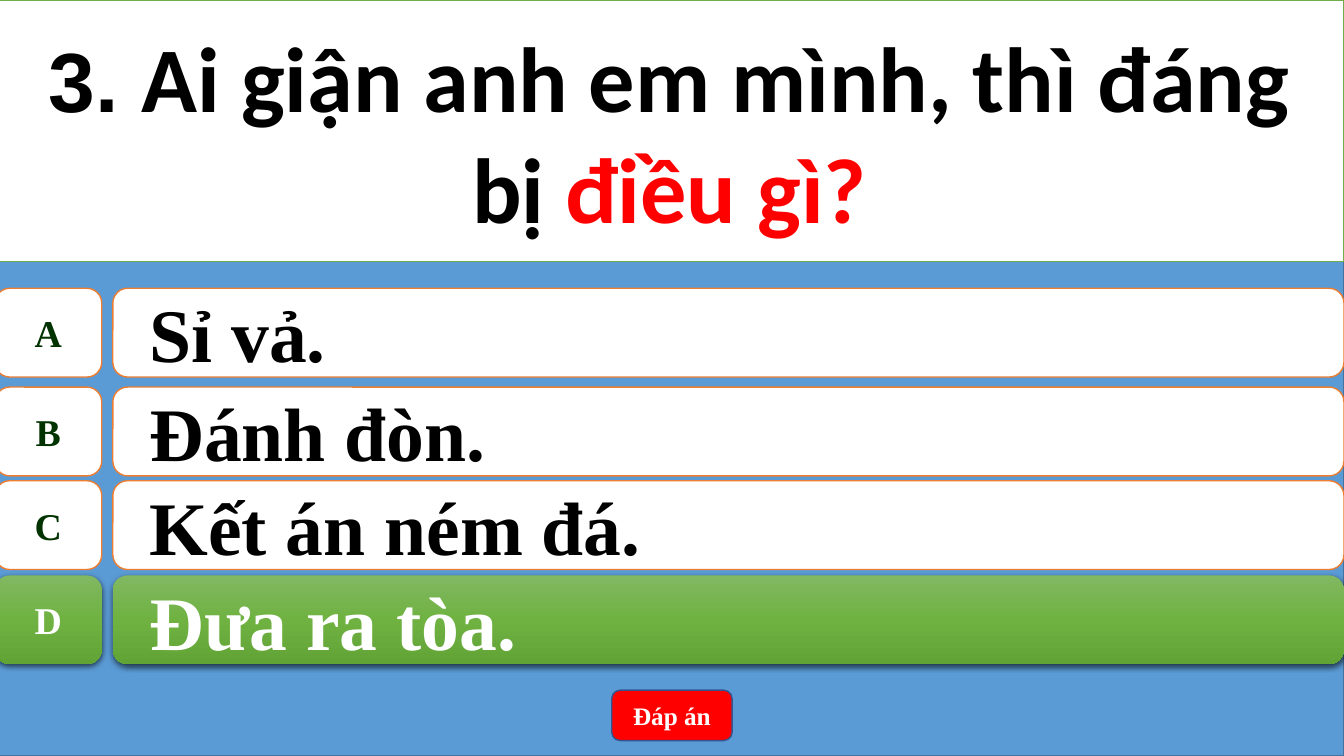
import pptx
import pptx.util
import pptx.dml.color
import pptx.enum.shapes
import pptx.enum.text
import pptx.oxml
import pptx.oxml.ns

Pt = pptx.util.Pt
RGB = pptx.dml.color.RGBColor
SHAPE = pptx.enum.shapes.MSO_SHAPE
ALIGN = pptx.enum.text.PP_ALIGN
qn = pptx.oxml.ns.qn

# Content: question runs are (text, font, size, colour)
BLACK, WHITE, RED = RGB(0, 0, 0), RGB(255, 255, 255), RGB(255, 0, 0)
BLUE, BLUE_EDGE = RGB(0x5B, 0x9B, 0xD5), RGB(0x43, 0x73, 0x9E)
ORANGE, GREEN_EDGE = RGB(0xED, 0x7D, 0x31), RGB(0x70, 0xAD, 0x47)
DARK_GREEN, BUTTON_EDGE = RGB(0, 0x33, 0), RGB(0x32, 0x54, 0x91)
GREENS = [(0, RGB(0x81, 0xB8, 0x61)), (50, RGB(0x6F, 0xB2, 0x42)), (100, RGB(0x62, 0xA3, 0x36))]

QUESTION = [
    ("3. ", "Arial", 60, BLACK),
    ("Ai giận anh em mình, thì đáng bị ", "Calibri", 66, BLACK),
    ("điều gì?", "Calibri", 66, RED),
]
ANSWERS = [  # letter, answer, top
    ("A", "Sỉ vả.", 205.9),
    ("B", "Đánh đòn.", 276.5),
    ("C", "Kết án ném đá.", 343.4),
    ("D", "Đưa ra tòa.", 411),
]
CORRECT = "D"
BUTTON = "Đáp án"

# Layout
WIDTH, HEIGHT = 960, 540
LEFT = -3.6
LETTER_WIDTH, ANSWER_LEFT, ROW_HEIGHT = 76.3, 80.6, 63.4
QUESTION_HEIGHT = 187

deck = pptx.Presentation()
deck.slide_width, deck.slide_height = Pt(WIDTH), Pt(HEIGHT)
slide = deck.slides.add_slide(deck.slide_layouts[5])


def paint(shape, fill, edge):
    shape.fill.solid()
    shape.fill.fore_color.rgb = fill
    shape.line.color.rgb = edge
    shape.line.width = Pt(1)


def paint_correct(shape):
    """Vertical green gradient with a soft shadow below."""
    ns = pptx.oxml.ns.nsdecls("a")
    stops = "".join(f'<a:gs pos="{at * 1000}"><a:srgbClr val="{color}"/></a:gs>'
                    for at, color in GREENS)
    gradient = pptx.oxml.parse_xml(
        f'<a:gradFill {ns}><a:gsLst>{stops}</a:gsLst><a:lin ang="5400000" scaled="0"/></a:gradFill>')
    properties = shape.element.spPr
    properties.find(qn("a:prstGeom")).addnext(gradient)
    shape.line.fill.background()
    properties.find(qn("a:effectLst")).append(pptx.oxml.parse_xml(
        f'<a:outerShdw {ns} blurRad="{Pt(4.5)}" dist="{Pt(1.5)}" dir="5400000" rotWithShape="0">'
        '<a:srgbClr val="000000"><a:alpha val="63000"/></a:srgbClr></a:outerShdw>'))


def add_box(kind, left, top, width, height):
    box = slide.shapes.add_shape(kind, Pt(left), Pt(top), Pt(width), Pt(height))
    box.shadow.inherit = False
    return box


def write(shape, text, size, color, align=ALIGN.CENTER, wrap=True):
    shape.text_frame.word_wrap = wrap
    shape.text_frame.vertical_anchor = pptx.enum.text.MSO_ANCHOR.MIDDLE
    paragraph = shape.text_frame.paragraphs[0]
    paragraph.text = text
    paragraph.alignment = align
    paragraph.font.name = "Times New Roman"
    paragraph.font.size = Pt(size)
    paragraph.font.bold = True
    paragraph.font.color.rgb = color
    return paragraph


# Blue backdrop
backdrop = add_box(SHAPE.RECTANGLE, LEFT, 0, WIDTH - LEFT, HEIGHT)
paint(backdrop, BLUE, BLUE_EDGE)

# Answer rows
for letter, answer, top in ANSWERS:
    letter_box = add_box(SHAPE.FLOWCHART_ALTERNATE_PROCESS, LEFT, top, LETTER_WIDTH, ROW_HEIGHT)
    answer_box = add_box(SHAPE.ROUNDED_RECTANGLE, ANSWER_LEFT, top, WIDTH - ANSWER_LEFT, ROW_HEIGHT)
    for box in (letter_box, answer_box):
        if letter == CORRECT:
            paint_correct(box)
        else:
            paint(box, WHITE, ORANGE)
    letter_color, answer_color = (WHITE, WHITE) if letter == CORRECT else (DARK_GREEN, BLACK)
    write(letter_box, letter, 27, letter_color, wrap=False)
    line = write(answer_box, answer, 54, answer_color, ALIGN.LEFT)
    line.level = 1
    indents = line._p.get_or_add_pPr()
    indents.set("marL", str(Pt(36)))
    indents.set("indent", str(Pt(-20)))

# Answer button
button = add_box(SHAPE.ROUNDED_RECTANGLE, 437, 493, 86, 36)
paint(button, RED, BUTTON_EDGE)
write(button, BUTTON, 18, WHITE)

# Question, in front of the backdrop
question = slide.shapes.title
backdrop.element.getparent().append(question.element)
question.left, question.top = Pt(LEFT), Pt(0)
question.width, question.height = Pt(WIDTH - LEFT), Pt(QUESTION_HEIGHT)
paint(question, WHITE, GREEN_EDGE)
frame = question.text_frame
frame.word_wrap = True
frame.auto_size = pptx.enum.text.MSO_AUTO_SIZE.NONE
frame.vertical_anchor = pptx.enum.text.MSO_ANCHOR.MIDDLE
sentence = frame.paragraphs[0]
sentence.alignment = ALIGN.CENTER
sentence.font.bold = True
for text, font, size, color in QUESTION:
    run = sentence.add_run()
    run.text = text
    run.font.name = font
    run.font.size = Pt(size)
    run.font.bold = True
    run.font.color.rgb = color

deck.save("out.pptx")
